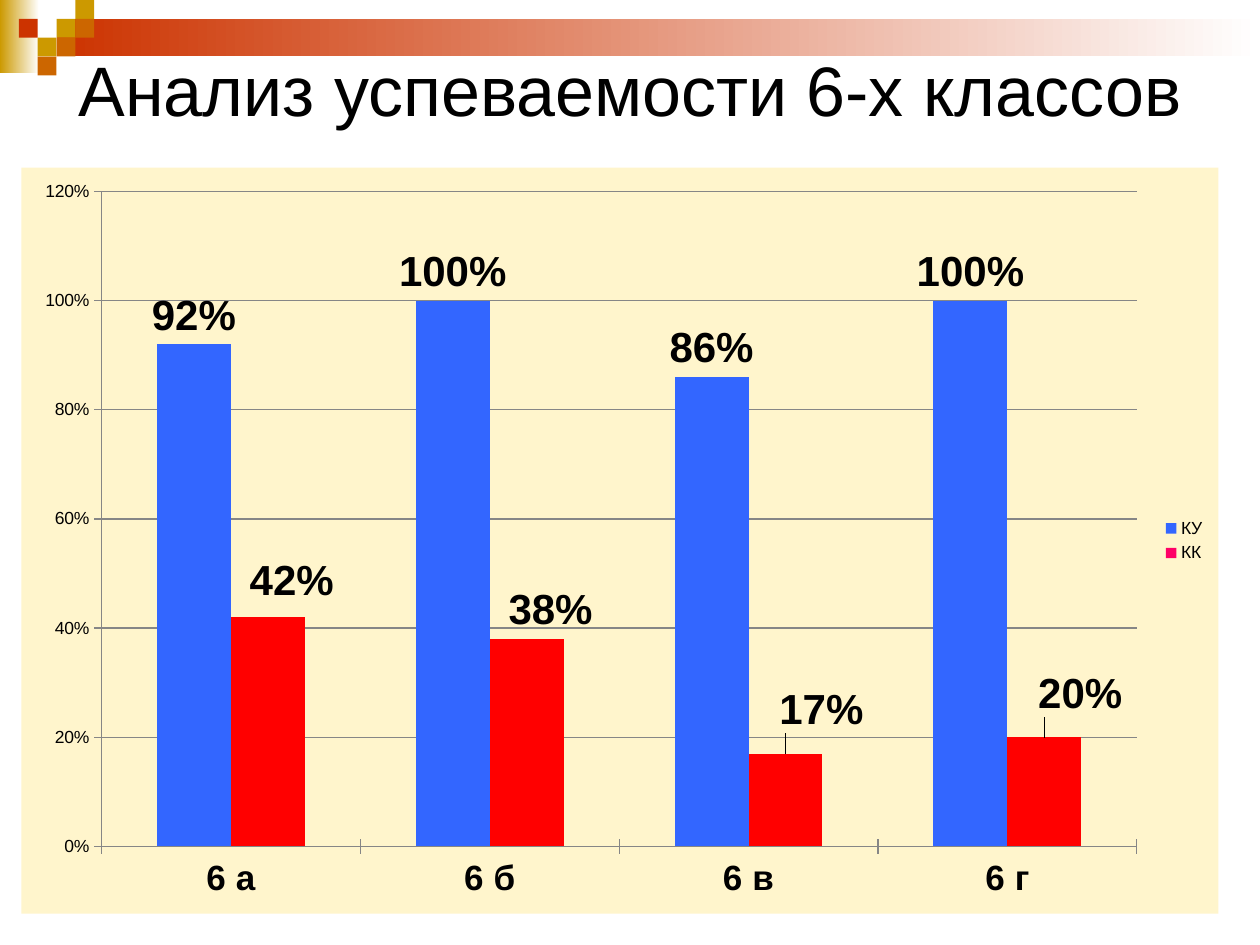
"""Builds a slide with a column chart of results in the sixth-year classes."""
from lxml.etree import fromstring
from pptx import Presentation
from pptx.chart.data import CategoryChartData
from pptx.dml.color import RGBColor
from pptx.enum.chart import (XL_CHART_TYPE, XL_LABEL_POSITION,
                             XL_LEGEND_POSITION, XL_TICK_MARK)
from pptx.enum.shapes import MSO_SHAPE
from pptx.enum.text import MSO_ANCHOR, PP_ALIGN
from pptx.oxml.ns import nsdecls
from pptx.util import Cm, Pt

BLACK = RGBColor(0x00, 0x00, 0x00)
WHITE = RGBColor(0xFF, 0xFF, 0xFF)
GOLD = RGBColor(0xCC, 0x99, 0x00)
ORANGE = RGBColor(0xCC, 0x66, 0x00)
BRICK = RGBColor(0xCC, 0x33, 0x00)
CREAM = RGBColor(0xFF, 0xF5, 0xCC)
GREY = RGBColor(0x86, 0x86, 0x86)
BLUE = RGBColor(0x33, 0x66, 0xFF)
PINK = RGBColor(0xFF, 0x00, 0x66)
RED = RGBColor(0xFF, 0x00, 0x00)

PERCENT = "0%"
TILE = 0.38
TILES = [(3, 1, GOLD), (4, 0, GOLD), (4, 1, ORANGE), (2, 2, GOLD),
         (1, 1, BRICK), (3, 2, ORANGE), (2, 3, ORANGE)]
CLASSES = ["6 а", "6 б", "6 в", "6 г"]
RESULTS = {"КУ": [0.92, 1, 0.86, 1], "КК": [0.42, 0.38, 0.17, 0.2]}
LABEL_SHIFTS = [(0.02, -0.01), (0.02, 0), (0.03, -0.02), (0.03, -0.02)]
PLOT_BOX = {"layoutTarget": "inner", "xMode": "edge", "yMode": "edge",
            "x": 0.067, "y": 0.032, "w": 0.865, "h": 0.878}


def element(tag, body="", attrs=""):
    return fromstring(f'<c:{tag} {nsdecls("c", "a")} {attrs}>{body}</c:{tag}>')


def layout(values):
    items = "".join(f'<c:{k} val="{v}"/>' for k, v in values.items())
    return element("layout", f"<c:manualLayout>{items}</c:manualLayout>")


class SlideBuilder:
    """Holds the style and the current slide."""

    font = "Arial"

    def __init__(self, prs):
        self.s = prs.slides.add_slide(prs.slide_layouts[5])

    def style(self, font, size, bold=False):
        values = {"name": self.font, "size": Pt(size), "bold": bold}
        for name, value in values.items():
            setattr(font, name, value)
        font.color.rgb = BLACK

    def rect(self, left, top, width, height, *colors):
        sp = self.s.shapes.add_shape(MSO_SHAPE.RECTANGLE, Cm(left), Cm(top),
                                     Cm(width), Cm(height))
        sp.shadow.inherit = False
        sp.line.fill.background()
        if len(colors) == 1:
            sp.fill.solid()
            sp.fill.fore_color.rgb = colors[0]
            return
        sp.fill.gradient()
        sp.fill.gradient_angle = 0
        for stop, color in zip(sp.fill.gradient_stops, colors):
            stop.color.rgb = color

    def title(self, text, left, top, width, height):
        sp = self.s.shapes.title
        box = {"left": left, "top": top, "width": width, "height": height}
        for name, value in box.items():
            setattr(sp, name, Cm(value))
        tf = sp.text_frame
        tf.word_wrap = True
        tf.vertical_anchor = MSO_ANCHOR.MIDDLE
        p = tf.paragraphs[0]
        p.alignment = PP_ALIGN.CENTER
        r = p.add_run()
        r.text = text
        self.style(r.font, 40)

    def chart(self, left, top, width, height):
        data = CategoryChartData(number_format=PERCENT)
        data.categories = CLASSES
        for name, values in RESULTS.items():
            data.add_series(name, values)
        chart = self.s.shapes.add_chart(
            XL_CHART_TYPE.COLUMN_CLUSTERED, Cm(left), Cm(top),
            Cm(width), Cm(height), data).chart
        self.style(chart.font, 10)
        chart.has_title = False
        chart.has_legend = True
        chart.legend.position = XL_LEGEND_POSITION.RIGHT
        chart.legend.include_in_layout = False
        self.backdrop(chart)
        self.axes(chart)
        plot = chart.plots[0]
        plot.gap_width, plot.overlap, plot.vary_by_categories = 150, 0, False
        for ser, color in zip(plot.series, (BLUE, PINK)):
            self.fill(ser, color)
            self.labels(ser.data_labels)
        self.red_points(plot.series[1])

    def backdrop(self, chart):
        fill = f'<a:solidFill><a:srgbClr val="{CREAM}"/></a:solidFill>'
        root = chart.element
        root.find("{*}chart").addnext(
            element("spPr", fill + "<a:ln><a:noFill/></a:ln>"))
        area = root.find(".//{*}plotArea")
        for old in area.findall("{*}layout"):
            area.remove(old)
        area.insert(0, layout(PLOT_BOX))

    def axes(self, chart):
        val, cat = chart.value_axis, chart.category_axis
        for axis, size, bold in ((val, 10, False), (cat, 20, True)):
            axis.major_tick_mark = XL_TICK_MARK.CROSS
            axis.format.line.color.rgb = GREY
            self.style(axis.tick_labels.font, size, bold)
        for name, value in {"minimum_scale": 0, "maximum_scale": 1.2,
                            "major_unit": 0.2}.items():
            setattr(val, name, value)
        val.major_gridlines.format.line.color.rgb = GREY
        val.tick_labels.number_format = PERCENT
        val.tick_labels.number_format_is_linked = False

    def fill(self, item, color):
        item.format.fill.solid()
        item.format.fill.fore_color.rgb = color

    def labels(self, labels):
        values = {"show_value": True, "number_format": PERCENT,
                  "number_format_is_linked": False,
                  "position": XL_LABEL_POSITION.OUTSIDE_END}
        for name, value in values.items():
            setattr(labels, name, value)
        self.style(labels.font, 24, True)

    def red_points(self, ser):
        for i, (dx, dy) in enumerate(LABEL_SHIFTS):
            point = ser.points[i]
            self.fill(point, RED)
            label = point.data_label
            label.position = XL_LABEL_POSITION.OUTSIDE_END
            self.style(label.font, 24, True)
        labels = ser.data_labels._element.findall("{*}dLbl")
        for label, (dx, dy) in zip(labels, LABEL_SHIFTS):
            idx = label.find("{*}idx")
            idx.addnext(element("numFmt", attrs=f'formatCode="{PERCENT}" sourceLinked="0"'))
            idx.addnext(layout({"x": dx, "y": dy}))


def main():
    prs = Presentation()
    prs.slide_width, prs.slide_height = Cm(25.4), Cm(19.05)
    b = SlideBuilder(prs)
    b.rect(0, 0, 0.79, 1.47, GOLD, WHITE)
    b.rect(3 * TILE, TILE, 25.4 - 3 * TILE, 2 * TILE, BRICK, WHITE)
    for col, row, color in TILES:
        b.rect(col * TILE, row * TILE, TILE, TILE, color)
    b.title("Анализ успеваемости 6-х классов", 0, 0.84, 25.4, 1.9)
    b.chart(0.43, 3.38, 24.13, 15.04)
    prs.save("out.pptx")


if __name__ == "__main__":
    main()
